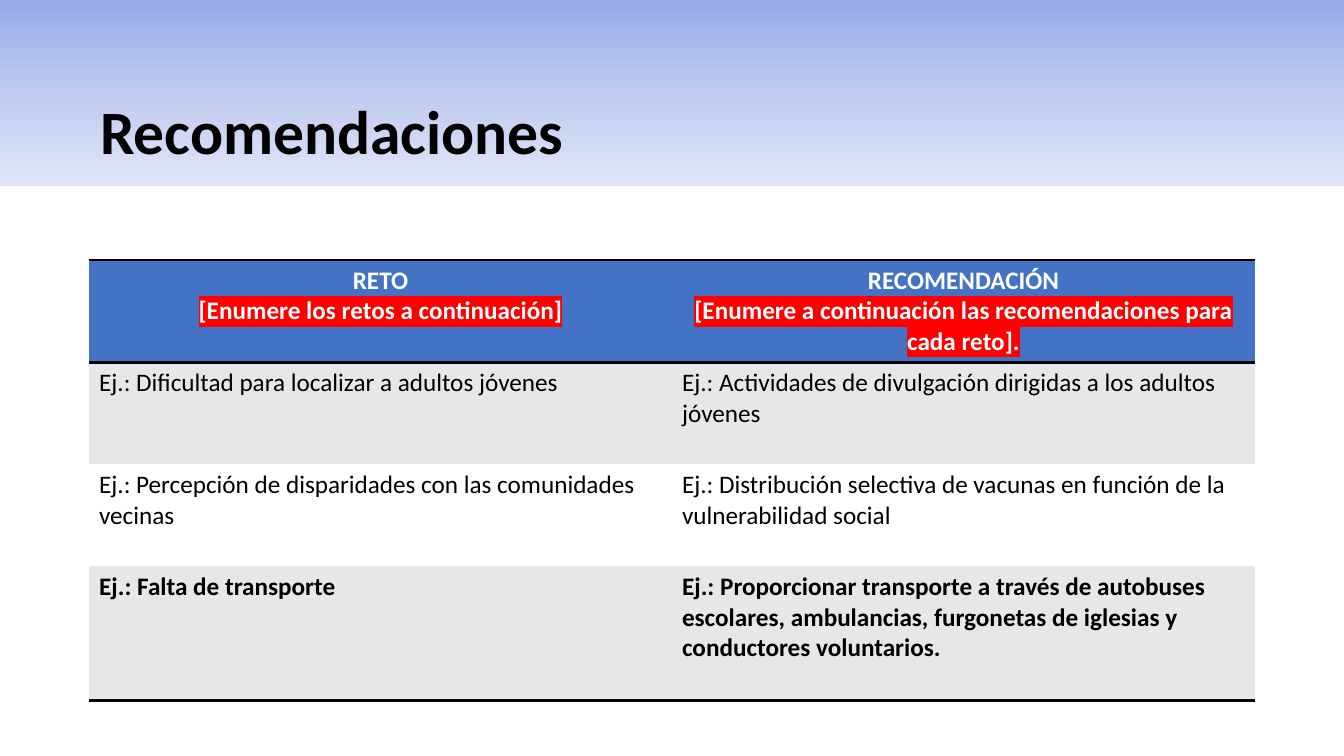
from copy import deepcopy
from lxml.etree import SubElement
from pptx import Presentation
from pptx.dml.color import RGBColor
from pptx.enum.shapes import MSO_SHAPE as Shape
from pptx.enum.text import MSO_ANCHOR as Anchor, PP_ALIGN as Align
from pptx.oxml import parse_xml
from pptx.oxml.ns import nsdecls, qn
from pptx.util import Pt

# Content
TITLE = "Recomendaciones"
HEADERS = [
    ("RETO", "[Enumere los retos a continuación]"),
    ("RECOMENDACIÓN", "[Enumere a continuación las recomendaciones para cada reto]."),
]
EXAMPLES = [
    ("Ej.: Dificultad para localizar a adultos jóvenes",
     "Ej.: Actividades de divulgación dirigidas a los adultos jóvenes"),
    ("Ej.: Percepción de disparidades con las comunidades vecinas",
     "Ej.: Distribución selectiva de vacunas en función de la vulnerabilidad social"),
    ("Ej.: Falta de transporte",
     "Ej.: Proporcionar transporte a través de autobuses escolares, ambulancias, "
     "furgonetas de iglesias y conductores voluntarios."),
]
GRADIENT = [(0, "96ABEA"), (0.5, "C0CBF0"), (1, "E0E5F7")]
ROW_HEIGHTS = [102, 102, 102, 134]
FONT = "Calibri"
BLACK, WHITE, RED, BLUE, GRAY = "000000", "FFFFFF", "FF0000", "4472C4", "E7E7E7"
NO_GRID_STYLE = "{2D5ABB26-0587-4C30-8999-92F81FD0307C}"


def px(length):
    return round(length * 914400 / 100.8)


def color(value):
    return RGBColor.from_string(value)


def set_font(font, size, value, bold):
    font.name, font.size, font.bold = FONT, Pt(size), bold
    font.color.rgb = color(value)


def add_rule(cell, side):
    """Draw a black edge on the top (lnT) or bottom (lnB) of a cell."""
    rule = parse_xml(
        f'<a:{side} {nsdecls("a")} w="{Pt(2)}"><a:solidFill>'
        f'<a:srgbClr val="{BLACK}"/></a:solidFill></a:{side}>')
    properties = cell._tc.get_or_add_tcPr()
    properties.insert(len(properties) - 1, rule)


def fill_cell(cell, lines, fill, text_color, bold, align):
    cell.fill.solid()
    cell.fill.fore_color.rgb = color(fill)
    frame = cell.text_frame
    frame.text = "\n".join(lines)
    for para in frame.paragraphs:
        para.alignment = align
        set_font(para.font, 18, text_color, bold)


def highlight(span):
    mark = SubElement(span._r.get_or_add_rPr(), qn("a:highlight"))
    SubElement(mark, qn("a:srgbClr"), val=RED)


deck = Presentation()
deck.slide_width, deck.slide_height = px(1344), px(756)
page = deck.slides.add_slide(deck.slide_layouts[5])

# Gradient band behind the title
band = page.shapes.add_shape(Shape.RECTANGLE, 0, 0, px(1344), px(186))
band.shadow.inherit = False
band.line.fill.background()
band.fill.gradient()
band.fill.gradient_angle = 270
stop_list = band._element.spPr.find(qn("a:gradFill")).find(qn("a:gsLst"))
stop_list.insert(1, deepcopy(stop_list[0]))
for stop, (position, value) in zip(band.fill.gradient_stops, GRADIENT):
    stop.position = position
    stop.color.rgb = color(value)
page.shapes._spTree.insert(2, band._element)

# Title
title = page.shapes.title
title.left, title.top, title.width, title.height = px(90), px(65), px(1165), px(107)
title.text_frame.text = TITLE
title.text_frame.vertical_anchor = Anchor.BOTTOM
heading = title.text_frame.paragraphs[0]
heading.alignment = Align.LEFT
heading.line_spacing = 0.85
set_font(heading.font, 44, BLACK, True)

# Table of challenges and recommendations
frame = page.shapes.add_table(len(EXAMPLES) + 1, len(HEADERS),
                              px(89), px(260), px(1166), px(sum(ROW_HEIGHTS)))
table = frame.table
table.horz_banding = False
table._tbl.tblPr.find(qn("a:tableStyleId")).text = NO_GRID_STYLE
for row, height in zip(table.rows, ROW_HEIGHTS):
    row.height = px(height)

last = len(EXAMPLES)
for column, lines in enumerate(HEADERS):
    head = table.cell(0, column)
    fill_cell(head, lines, BLUE, WHITE, True, Align.CENTER)
    highlight(head.text_frame.paragraphs[1].runs[0])
    add_rule(head, "lnT")
    add_rule(head, "lnB")
    for number, example in enumerate(EXAMPLES, 1):
        fill_cell(table.cell(number, column), [example[column]],
                  GRAY if number % 2 else WHITE, BLACK, number == last, Align.LEFT)
    add_rule(table.cell(last, column), "lnB")

deck.save("out.pptx")
